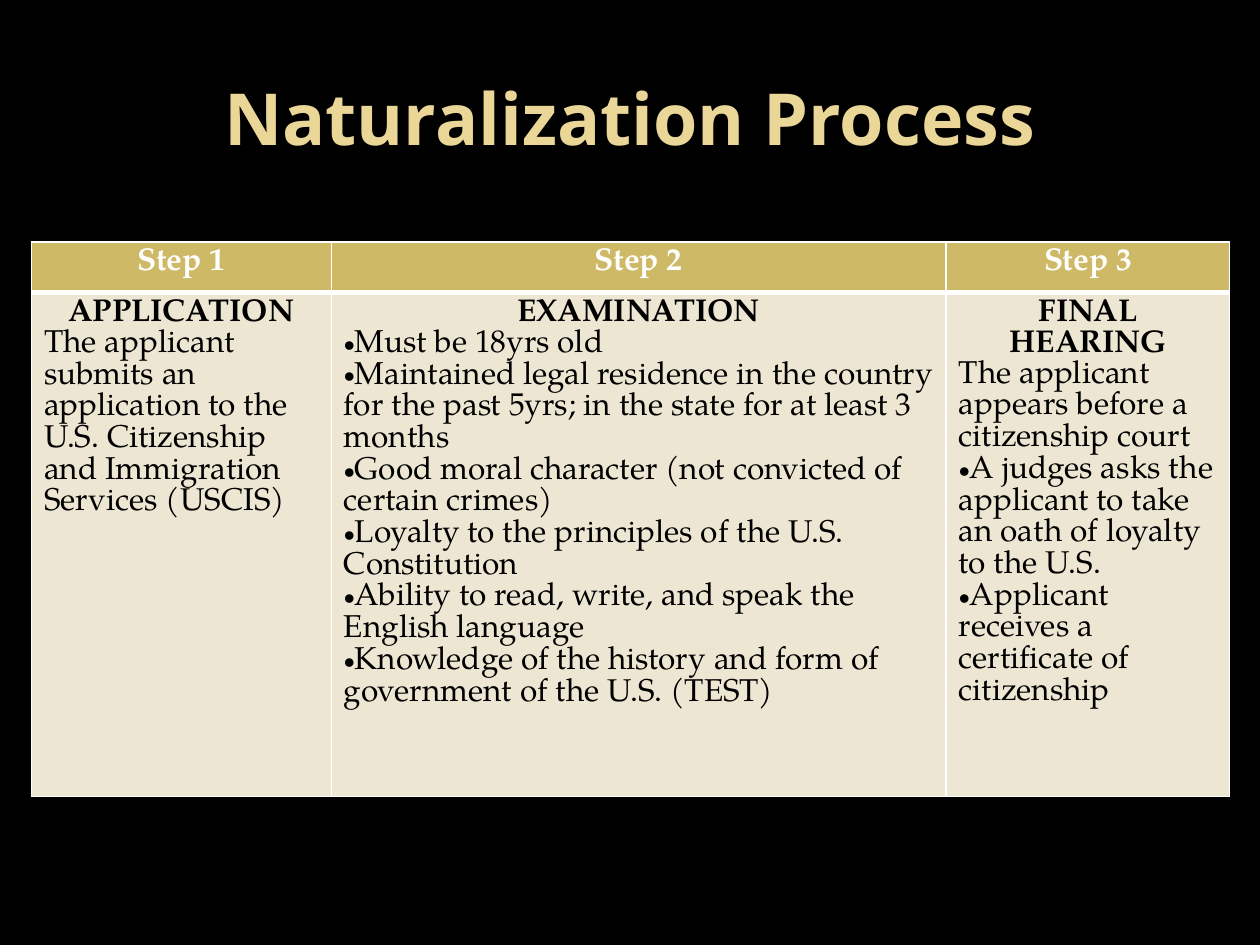
"""Build the Naturalization Process slide with its three-step table."""
from lxml import etree
from pptx import Presentation
from pptx.dml.color import RGBColor
from pptx.enum.text import MSO_ANCHOR, PP_ALIGN
from pptx.oxml.ns import qn
from pptx.util import Inches, Pt

COLORS = {"black": "000000", "white": "FFFFFF", "title": "EAD696",
          "header": "CEB966", "body": "EDE6D3"}
BODY_FONT = "TeX Gyre Pagella"
STEPS = [
    ("Step 1", 2.38, "APPLICATION",
     "The applicant submits an application to the U.S. Citizenship and "
     "Immigration Services (USCIS)", []),
    ("Step 2", 4.88, "EXAMINATION", None, [
        "Must be 18yrs old",
        "Maintained legal residence in the country for the past 5yrs; "
        "in the state for at least 3 months",
        "Good moral character (not convicted of certain crimes)",
        "Loyalty to the principles of the U.S. Constitution",
        "Ability to read, write, and speak the English language",
        "Knowledge of the history and form of government of the U.S. (TEST)"]),
    ("Step 3", 2.25, "FINAL HEARING",
     "The applicant appears before a citizenship court", [
         "A judges asks the applicant to take an oath of loyalty to the U.S.",
         "Applicant receives a certificate of citizenship"]),
]


def add_text(p, text, size, font, color, bold=False, centered=False, bullet=False):
    p.alignment = PP_ALIGN.CENTER if centered else PP_ALIGN.LEFT
    if bullet:
        pPr = p._p.get_or_add_pPr()
        etree.SubElement(pPr, qn("a:buFont"), typeface="Arial")
        etree.SubElement(pPr, qn("a:buChar"), char="•")
    r = p.add_run()
    r.text = text
    r.font.size = Pt(size)
    r.font.name = font
    r.font.bold = bold
    r.font.color.rgb = RGBColor.from_string(COLORS[color])


def style_cell(cell, fill, widths):
    tcPr = cell._tc.get_or_add_tcPr()
    for side, width in widths.items():
        ln = etree.SubElement(tcPr, qn(f"a:ln{side}"), w=str(Pt(width)))
        solid = etree.SubElement(ln, qn("a:solidFill"))
        etree.SubElement(solid, qn("a:srgbClr"), val=COLORS["white"])
    cell.fill.solid()
    cell.fill.fore_color.rgb = RGBColor.from_string(COLORS[fill])


prs = Presentation()
prs.slide_width, prs.slide_height = Inches(10), Inches(7.5)
s = prs.slides.add_slide(prs.slide_layouts[6])
s.background.fill.solid()
s.background.fill.fore_color.rgb = RGBColor.from_string(COLORS["black"])

title = s.shapes.add_textbox(Inches(0.5), Inches(0.3), Inches(9), Inches(1.25))
tf = title.text_frame
tf.word_wrap = True
tf.vertical_anchor = MSO_ANCHOR.MIDDLE
add_text(tf.paragraphs[0], "Naturalization Process", 41, "Noto Sans", "title",
         bold=True, centered=True)

table = s.shapes.add_table(2, len(STEPS), Inches(0.25), Inches(1.92),
                           Inches(9.5), Inches(3.77)).table
table.rows[0].height = Inches(0.4)
table.rows[1].height = Inches(3.37)

for col, (step, width, heading, intro, bullets) in enumerate(STEPS):
    table.columns[col].width = Inches(width)
    header, body = table.cell(0, col), table.cell(1, col)
    style_cell(header, "header", {"L": 1, "R": 1, "T": 1, "B": 3})
    style_cell(body, "body", {"L": 1, "R": 1, "T": 3, "B": 1})
    add_text(header.text_frame.paragraphs[0], step, 18, BODY_FONT, "white",
             bold=True, centered=True)
    tf = body.text_frame
    add_text(tf.paragraphs[0], heading, 18, BODY_FONT, "black",
             bold=True, centered=True)
    if intro:
        add_text(tf.add_paragraph(), intro, 18, BODY_FONT, "black")
    for text in bullets:
        add_text(tf.add_paragraph(), text, 18, BODY_FONT, "black", bullet=True)

prs.save("out.pptx")
